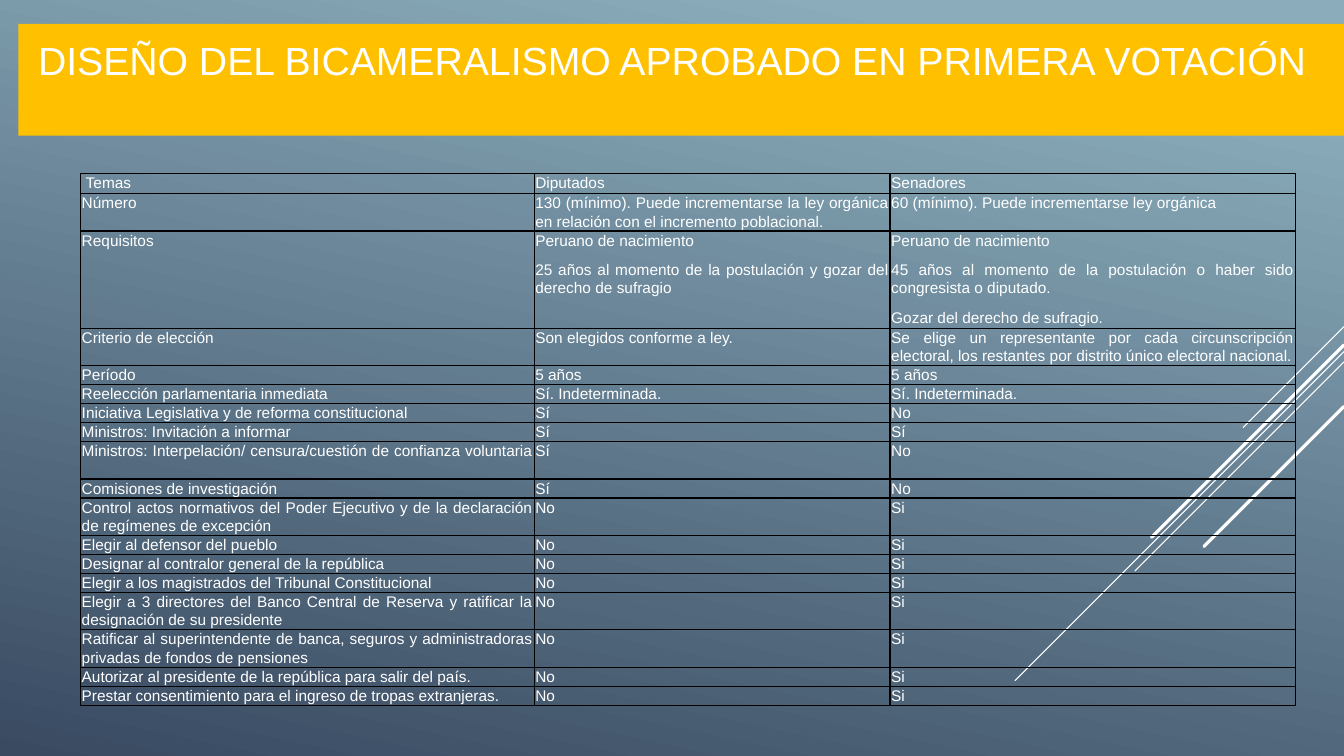
from lxml import etree
from pptx import Presentation
from pptx.dml.color import RGBColor
from pptx.enum.shapes import MSO_CONNECTOR
from pptx.enum.text import MSO_ANCHOR, MSO_AUTO_SIZE, PP_ALIGN
from pptx.oxml import parse_xml
from pptx.oxml.ns import nsdecls, qn
from pptx.util import Cm, Pt

STRAIGHT = MSO_CONNECTOR.STRAIGHT
TOP = MSO_ANCHOR.TOP
NO_AUTOFIT = MSO_AUTO_SIZE.NONE
LEFT = PP_ALIGN.LEFT
JUSTIFY = PP_ALIGN.JUSTIFY

COLORS = {
    "sky": "8AACBB",
    "navy": "394A61",
    "band": "FFC000",
    "text": "FFFFFF",
    "border": "000000",
}
FONT = "Arial"
SLIDE_WIDTH = 33.87
ONE_LINE, TWO_LINES = 0.48, 0.94


def set_format(target, values):
    for name, value in values.items():
        setattr(target, name, value)


def write_paragraph(paragraph, text, size, values):
    paragraph.text = text
    set_format(paragraph, values)
    set_format(paragraph.font, {"name": FONT, "size": Pt(size), "bold": False})
    paragraph.font.color.rgb = RGBColor.from_string(COLORS["text"])


presentation = Presentation()
presentation.slide_width = Cm(SLIDE_WIDTH)
presentation.slide_height = Cm(19.05)
slide = presentation.slides.add_slide(presentation.slide_layouts[5])

background = slide.background.fill
background.gradient()
background.gradient_angle = 258
for stop, position, color in zip(background.gradient_stops, (0.1, 1), ("sky", "navy")):
    stop.position = position
    stop.color.rgb = RGBColor.from_string(COLORS[color])

diagonals = [
    (8.23, 2.54, 0.75),
    (8.86, 8.29, 0.75),
    (9.12, 5.27, 0.75),
    (8.69, 4.85, 2.25),
    (10.24, 3.53, 2.25),
]
for top, reach, width in diagonals:
    line = slide.shapes.add_connector(
        STRAIGHT, Cm(SLIDE_WIDTH), Cm(top), Cm(SLIDE_WIDTH - reach), Cm(top + reach)
    )
    line.line.color.rgb = RGBColor.from_string(COLORS["text"])
    line.line.width = Pt(width)
    line.line._get_or_add_ln().set("cap", "rnd")
    etree.SubElement(line._element.spPr, qn("a:effectLst"))

title = slide.shapes.title
set_format(title, {"left": Cm(0.46), "top": Cm(0.6), "width": Cm(33.41), "height": Cm(2.82)})
title.fill.solid()
title.fill.fore_color.rgb = RGBColor.from_string(COLORS["band"])
set_format(title.text_frame, {
    "margin_left": Cm(0.5),
    "margin_right": Cm(0),
    "margin_top": Cm(0.31),
    "margin_bottom": Cm(0),
    "vertical_anchor": TOP,
    "word_wrap": True,
    "auto_size": NO_AUTOFIT,
})
write_paragraph(
    title.text_frame.paragraphs[0],
    "DISEÑO DEL BICAMERALISMO APROBADO EN PRIMERA VOTACIÓN",
    28,
    {"alignment": LEFT},
)

rows = [
    (0.51, " Temas", "Diputados", "Senadores"),
    (TWO_LINES, "Número",
     "130 (mínimo). Puede incrementarse la ley orgánica en relación con el incremento poblacional.",
     "60 (mínimo). Puede incrementarse ley orgánica"),
    (2.45, "Requisitos",
     "Peruano de nacimiento\n25 años al momento de la postulación y gozar del derecho de sufragio",
     "Peruano de nacimiento\n45 años al momento de la postulación o haber sido congresista o diputado.\n"
     "Gozar del derecho de sufragio."),
    (TWO_LINES, "Criterio de elección", "Son elegidos conforme a ley.",
     "Se elige un representante por cada circunscripción electoral, "
     "los restantes por distrito único electoral nacional."),
    (ONE_LINE, "Período", "5 años", "5 años"),
    (ONE_LINE, "Reelección parlamentaria inmediata", "Sí. Indeterminada.", "Sí. Indeterminada."),
    (ONE_LINE, "Iniciativa Legislativa y de reforma constitucional", "Sí", "No"),
    (ONE_LINE, "Ministros: Invitación a informar", "Sí", "Sí"),
    (TWO_LINES, "Ministros: Interpelación/ censura/cuestión de confianza voluntaria ", "Sí", "No"),
    (ONE_LINE, "Comisiones de investigación", "Sí", "No"),
]
senate_powers = [
    (TWO_LINES, "Control actos normativos del Poder Ejecutivo y de la declaración de regímenes de excepción"),
    (ONE_LINE, "Elegir al defensor del pueblo"),
    (ONE_LINE, "Designar al contralor general de la república"),
    (ONE_LINE, "Elegir a los magistrados del Tribunal Constitucional"),
    (TWO_LINES, "Elegir a 3 directores del Banco Central de Reserva y ratificar la designación de su presidente"),
    (TWO_LINES, "Ratificar al superintendente de banca, seguros y administradoras privadas de fondos de pensiones"),
    (ONE_LINE, "Autorizar al presidente de la república para salir del país."),
    (ONE_LINE, "Prestar consentimiento para el ingreso de tropas extranjeras."),
]
rows += [(height, power, "No", "Si") for height, power in senate_powers]
column_widths = (11.43, 8.97, 10.21)

table = slide.shapes.add_table(
    len(rows), len(column_widths), Cm(2.03), Cm(4.37),
    Cm(sum(column_widths)), Cm(sum(row[0] for row in rows)),
).table
set_format(table, {"first_row": False, "horz_banding": False})
for column, width in zip(table.columns, column_widths):
    column.width = Cm(width)

cell_format = {
    "margin_left": Cm(0.03),
    "margin_right": Cm(0.03),
    "margin_top": Cm(0),
    "margin_bottom": Cm(0),
    "vertical_anchor": TOP,
}
paragraph_format = {"alignment": JUSTIFY, "line_spacing": 1.07, "space_after": Pt(8)}
for table_row, (height, *texts) in zip(table.rows, rows):
    table_row.height = Cm(height)
    for cell, text in zip(table_row.cells, texts):
        set_format(cell, cell_format)
        cell.text = text
        for paragraph in cell.text_frame.paragraphs:
            write_paragraph(paragraph, paragraph.text, 11, paragraph_format)
        properties = cell._tc.get_or_add_tcPr()
        for side in ("lnL", "lnR", "lnT", "lnB"):
            properties.append(parse_xml(
                f'<a:{side} {nsdecls("a")} w="{Pt(1)}"><a:solidFill>'
                f'<a:srgbClr val="{COLORS["border"]}"/></a:solidFill></a:{side}>'
            ))
        cell.fill.background()

presentation.save("out.pptx")
